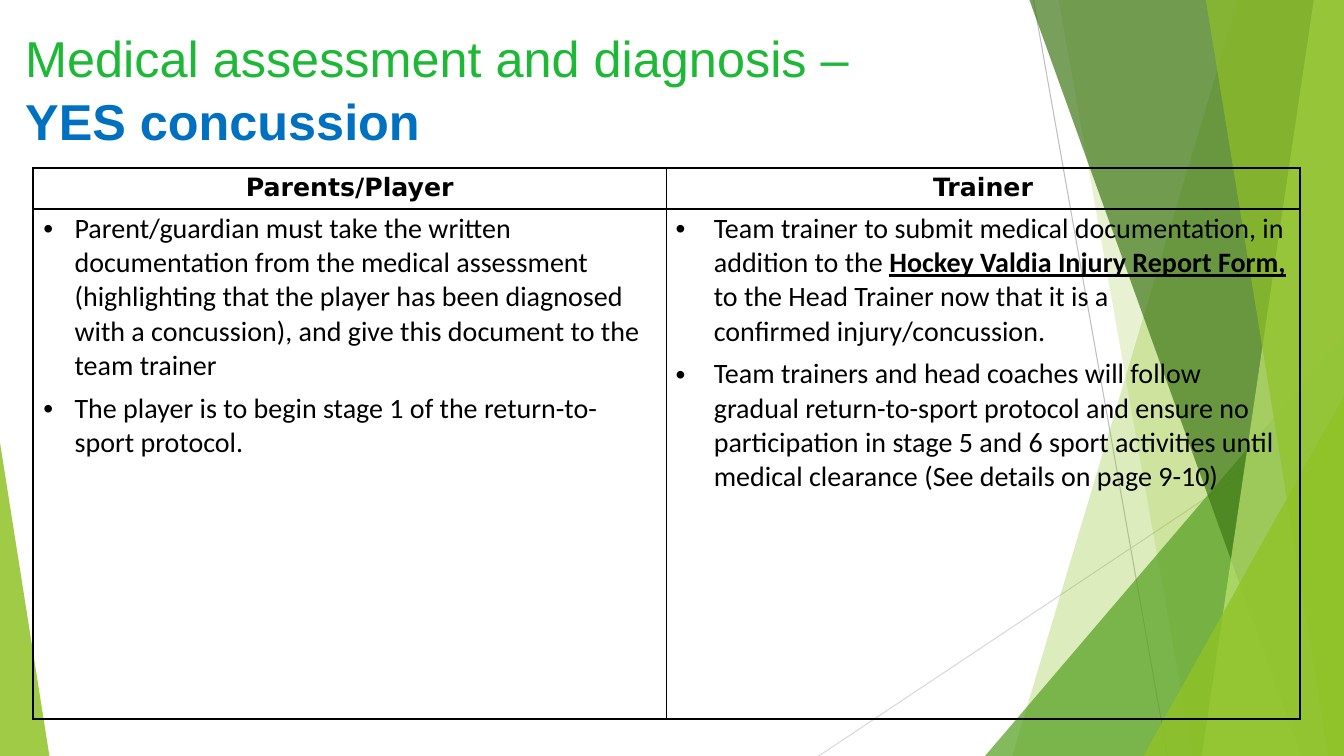
from lxml import etree
from pptx import Presentation
from pptx.dml.color import RGBColor
from pptx.enum.shapes import MSO_CONNECTOR, MSO_SHAPE
from pptx.enum.text import MSO_ANCHOR, PP_ALIGN
from pptx.oxml.ns import qn
from pptx.util import Inches, Pt

STRAIGHT = MSO_CONNECTOR.STRAIGHT
TRIANGLE = MSO_SHAPE.ISOSCELES_TRIANGLE
TOP, MIDDLE = MSO_ANCHOR.TOP, MSO_ANCHOR.MIDDLE
LEFT, CENTER = PP_ALIGN.LEFT, PP_ALIGN.CENTER

WIDTH, HEIGHT = 13.33, 7.5

THEME = {
    "title": {"name": "Arial", "size": 36, "color": "1DB836", "bold": False},
    "emphasis": {"name": "Arial", "size": 36, "color": "0070C0", "bold": True},
    "header": {"name": "DejaVu Sans", "size": 18, "color": "000000", "bold": True},
    "body": {"name": "Calibri", "size": 20, "color": "000000", "bold": False},
    "form": {"name": "Calibri", "size": 20, "color": "000000", "bold": True,
             "underline": True},
    "border": ("000000", 1.5),
}

TITLE = [("Medical assessment and diagnosis –\n", "title"),
         ("YES concussion", "emphasis")]

# Each column: heading, (text indent, bullet hang), bulleted paragraphs
COLUMNS = [
    ("Parents/Player", (0.41, 0.31), [
        [("Parent/guardian must take the written documentation from the medical "
          "assessment (highlighting that the player has been diagnosed\nwith a "
          "concussion), and give this document to the team trainer", "body")],
        [("The player is to begin stage 1 of the return-to-\nsport protocol.", "body")],
    ]),
    ("Trainer", (0.47, 0.38), [
        [("Team trainer to submit medical documentation, in addition to the ", "body"),
         ("Hockey Valdia Injury Report Form,", "form"),
         (" to the Head Trainer now that it is a\nconfirmed injury/concussion.", "body")],
        [("Team trainers and head coaches will follow\ngradual return-to-sport protocol "
          "and ensure no participation in stage 5 and 6 sport activities until "
          "medical clearance (See details on page 9-10)", "body")],
    ]),
]

TABLE_AT = (0.33, 1.67)
COLUMN_WIDTH = 6.28
ROW_HEIGHTS = (0.4, 5.06)

# Start, end, colour
THIN_LINES = [((10.25, 0), (11.58, HEIGHT), "BFBFBF"),
              ((WIDTH, 4.03), (8.12, HEIGHT), "D8D8D8")]

# Bands: top-left x, bottom-left x; each runs to the right edge of the slide.
# Triangles: left, top, width, apex position; each stands on the bottom edge.
FACETS = [
    ("band", (12.28, 10.04), "90C226", 30),
    ("band", (10.5, 11.83), "90C226", 20),
    ("triangle", (9.77, 3.33, 3.56, 1), "54A021", 72),
    ("band", (10.21, 12.91), "3F7818", 70),
    ("band", (13.03, 11.92), "BFE471", 70),
    ("band", (11.96, 13.18), "90C226", 65),
    ("triangle", (11.34, 3.93, 1.99, 1), "90C226", 80),
    ("triangle", (0, 4.39, 0.49, 0), "90C226", 85),
]


def add_thin_line(slide, start, end, color):
    line = slide.shapes.add_connector(STRAIGHT, *map(Inches, start + end))
    line.line.color.rgb = RGBColor.from_string(color)
    line.line.width = Pt(0.75)
    etree.SubElement(line._element.spPr, qn("a:effectLst"))


def add_facet(slide, kind, geometry, color, opacity):
    if kind == "band":
        top_x, bottom_x = geometry
        corners = [(WIDTH, 0), (WIDTH, HEIGHT), (bottom_x, HEIGHT)]
        builder = slide.shapes.build_freeform(Inches(top_x), 0)
        builder.add_line_segments([tuple(map(Inches, corner)) for corner in corners])
        facet = builder.convert_to_shape()
    else:
        left, top, width, apex = geometry
        box = map(Inches, (left, top, width, HEIGHT - top))
        facet = slide.shapes.add_shape(TRIANGLE, *box)
        facet.adjustments[0] = apex
    facet.shadow.inherit = False
    facet.line.fill.background()
    facet.fill.solid()
    facet.fill.fore_color.rgb = RGBColor.from_string(color)
    tint = facet._element.spPr.find(".//" + qn("a:srgbClr"))
    etree.SubElement(tint, qn("a:alpha"), val=str(opacity * 1000))


def set_font(font, style):
    for key, value in THEME[style].items():
        if key == "color":
            font.color.rgb = RGBColor.from_string(value)
        else:
            setattr(font, key, Pt(value) if key == "size" else value)


def write_spans(para, spans):
    """Add styled runs, turning each newline into a line break."""
    for text, style in spans:
        for number, line in enumerate(text.split("\n")):
            if number:
                para.add_line_break()
            if line:
                span = para.add_run()
                span.text = line
                set_font(span.font, style)


def add_bullet(para, indent, hang):
    properties = para._p.get_or_add_pPr()
    properties.set("marL", str(Inches(indent)))
    properties.set("indent", str(-Inches(hang)))
    color = etree.SubElement(properties, qn("a:buClr"))
    etree.SubElement(color, qn("a:srgbClr"), val=THEME["body"]["color"])
    etree.SubElement(properties, qn("a:buFont"), typeface="Arial")
    etree.SubElement(properties, qn("a:buChar"), char="•")


def format_cell(cell, top_margin):
    margins = {"margin_left": 0, "margin_top": Inches(top_margin),
               "margin_right": 0, "margin_bottom": 0, "vertical_anchor": TOP}
    for key, value in margins.items():
        setattr(cell, key, value)
    color, width = THEME["border"]
    properties = cell._tc.get_or_add_tcPr()
    for side in ("lnL", "lnR", "lnT", "lnB"):
        border = etree.SubElement(properties, qn("a:" + side), w=str(Pt(width)))
        fill = etree.SubElement(border, qn("a:solidFill"))
        etree.SubElement(fill, qn("a:srgbClr"), val=color)
    cell.fill.background()


def add_title(slide):
    box = slide.shapes.add_textbox(*map(Inches, (0.24, 0.25, 10.88, 1.23)))
    frame = box.text_frame
    settings = {"margin_left": Inches(0.01), "margin_top": Inches(0.01),
                "margin_right": 0, "margin_bottom": 0,
                "word_wrap": True, "vertical_anchor": MIDDLE}
    for key, value in settings.items():
        setattr(frame, key, value)
    para = frame.paragraphs[0]
    para.line_spacing = 1.04
    write_spans(para, TITLE)


def add_duties_table(slide):
    size = (COLUMN_WIDTH * len(COLUMNS), sum(ROW_HEIGHTS))
    table = slide.shapes.add_table(len(ROW_HEIGHTS), len(COLUMNS),
                                   *map(Inches, TABLE_AT + size)).table
    table.first_row = table.horz_banding = False
    for row, height in zip(table.rows, ROW_HEIGHTS):
        row.height = Inches(height)
    for index, (heading, (indent, hang), bullets) in enumerate(COLUMNS):
        table.columns[index].width = Inches(COLUMN_WIDTH)
        header, body = table.cell(0, index), table.cell(1, index)
        format_cell(header, 0.05)
        format_cell(body, 0.03)
        para = header.text_frame.paragraphs[0]
        para.alignment = CENTER
        write_spans(para, [(heading, "header")])
        frame = body.text_frame
        for number, spans in enumerate(bullets):
            para = frame.add_paragraph() if number else frame.paragraphs[0]
            para.alignment = LEFT
            para.space_before = Pt(6 if number else 0)
            add_bullet(para, indent, hang)
            write_spans(para, spans)


def main():
    deck = Presentation()
    deck.slide_width, deck.slide_height = Inches(WIDTH), Inches(HEIGHT)
    slide = deck.slides.add_slide(deck.slide_layouts[6])
    for thin_line in THIN_LINES:
        add_thin_line(slide, *thin_line)
    for facet in FACETS:
        add_facet(slide, *facet)
    add_title(slide)
    add_duties_table(slide)
    deck.save("out.pptx")


if __name__ == "__main__":
    main()
